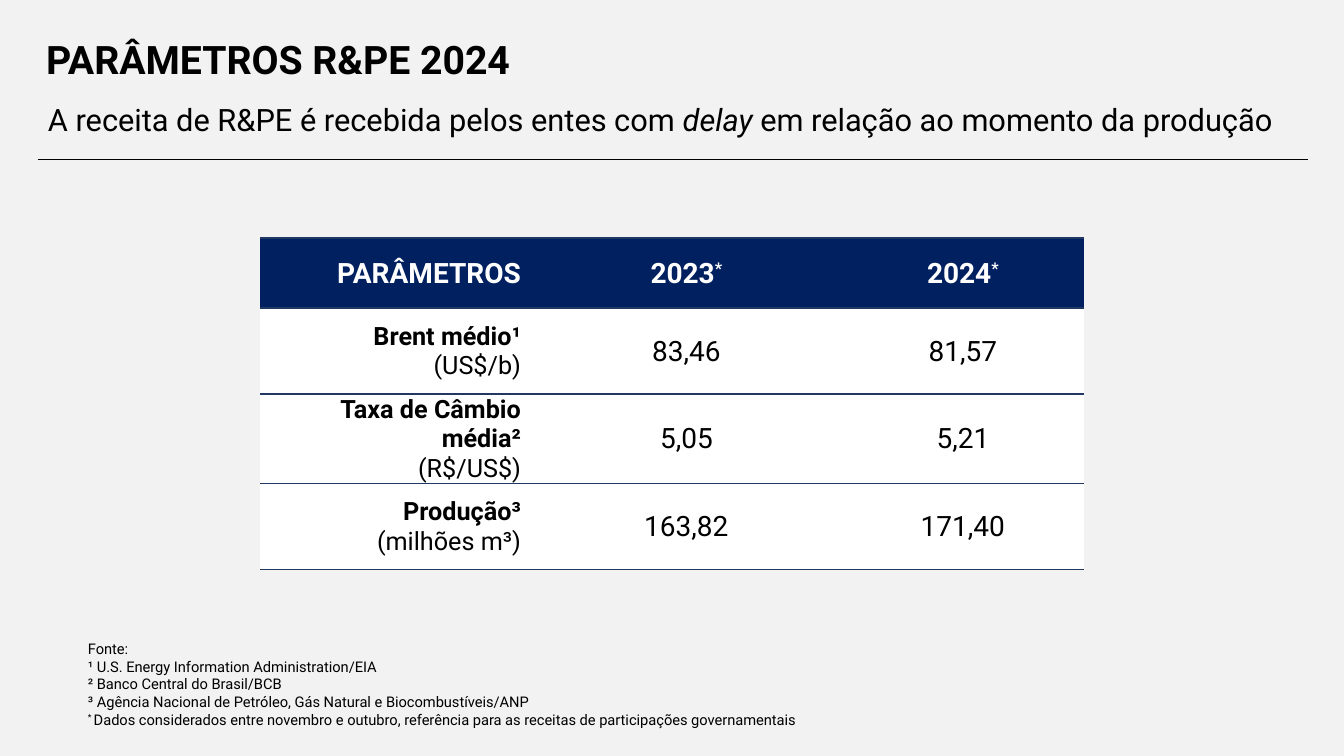
from lxml.etree import SubElement
from pptx import Presentation
from pptx.dml.color import RGBColor
from pptx.enum.shapes import MSO_CONNECTOR
from pptx.enum.text import MSO_ANCHOR, MSO_AUTO_SIZE, PP_ALIGN
from pptx.oxml.ns import qn
from pptx.util import Emu, Pt

BLACK = RGBColor(0x00, 0x00, 0x00)
WHITE = RGBColor(0xFF, 0xFF, 0xFF)
NAVY = RGBColor(0x00, 0x20, 0x60)
RULE_BLUE = RGBColor(0x20, 0x38, 0x64)
PAPER = RGBColor(0xF2, 0xF2, 0xF2)
PLAIN_TABLE_STYLE = "{2D5ABB26-0587-4C30-8999-92F81FD0307C}"


def px(length):
    return Emu(round(length * 914400 / 100.8))


class SlideBuilder:
    font = "Roboto"

    def __init__(self, deck):
        self.page = deck.slides.add_slide(deck.slide_layouts[5])
        fill = self.page.background.fill
        fill.solid()
        fill.fore_color.rgb = PAPER

    def add_paragraphs(self, frame, paragraphs, size, color=BLACK, align=PP_ALIGN.LEFT,
                       spacing=None):
        """Fill a frame; each paragraph is a list of (text, marks), marks using b, i and ^."""
        for index, spans in enumerate(paragraphs):
            para = frame.add_paragraph() if index else frame.paragraphs[0]
            para.alignment = align
            if spacing:
                para.line_spacing = spacing
            for text, marks in spans:
                span = para.add_run()
                span.text = text
                span.font.name = self.font
                span.font.size = Pt(size)
                span.font.color.rgb = color
                span.font.bold = "b" in marks
                span.font.italic = "i" in marks
                if "^" in marks:
                    span.font._element.set("baseline", "30000")

    def place_text(self, box, bounds, paragraphs, size, anchor=MSO_ANCHOR.MIDDLE, spacing=None):
        box.left, box.top, box.width, box.height = map(px, bounds)
        frame = box.text_frame
        frame.word_wrap = True
        frame.auto_size = MSO_AUTO_SIZE.NONE
        frame.vertical_anchor = anchor
        self.add_paragraphs(frame, paragraphs, size, spacing=spacing)

    def title(self, bounds, text):
        self.place_text(self.page.shapes.title, bounds, [[(text, "b")]], 28, spacing=0.9)

    def text(self, bounds, paragraphs, size, **style):
        box = self.page.shapes.add_textbox(0, 0, 0, 0)
        self.place_text(box, bounds, paragraphs, size, **style)

    def rule(self, left, right, y):
        line = self.page.shapes.add_connector(
            MSO_CONNECTOR.STRAIGHT, px(left), px(y), px(right), px(y))
        line.line.color.rgb = BLACK
        line.line.width = Pt(0.5)
        SubElement(line._element.spPr, qn("a:effectLst"))

    def table(self, left, top, widths, heights):
        frame = self.page.shapes.add_table(
            len(heights), len(widths), px(left), px(top), px(sum(widths)), px(sum(heights)))
        table = frame.table
        table._tbl.tblPr.find(qn("a:tableStyleId")).text = PLAIN_TABLE_STYLE
        table.horz_banding = False
        for column, width in zip(table.columns, widths):
            column.width = px(width)
        for row, height in zip(table.rows, heights):
            row.height = px(height)
        for index, row in enumerate(table.rows):
            for cell in row.cells:
                self.style_cell(cell, WHITE if index else NAVY)
        return table

    def style_cell(self, cell, color):
        cell.vertical_anchor = MSO_ANCHOR.MIDDLE
        cell.margin_left = cell.margin_top = cell.margin_right = px(1)
        cell.margin_bottom = 0
        for side in ("a:lnT", "a:lnB"):
            border = SubElement(cell._tc.get_or_add_tcPr(), qn(side), w=str(Pt(1)))
            solid = SubElement(border, qn("a:solidFill"))
            SubElement(solid, qn("a:srgbClr"), val=str(RULE_BLUE))
        cell.fill.solid()
        cell.fill.fore_color.rgb = color


def main():
    deck = Presentation()
    deck.slide_width, deck.slide_height = px(1344), px(756)
    slide = SlideBuilder(deck)

    slide.title((36, 22, 948, 80), "PARÂMETROS R&PE 2024")
    slide.rule(38, 1308, 159)

    parameters = [
        ("Brent médio¹", "(US$/b)", "83,46", "81,57"),
        ("Taxa de Câmbio média²", "(R$/US$)", "5,05", "5,21"),
        ("Produção³", "(milhões m³)", "163,82", "171,40"),
    ]
    table = slide.table(260, 238, [262, 60, 209, 51, 242], [70, 86, 86, 86])
    slide.add_paragraphs(table.cell(0, 0).text_frame, [[("PARÂMETROS", "b")]],
                         20, WHITE, PP_ALIGN.RIGHT)
    for column, year in ((2, "2023"), (4, "2024")):
        slide.add_paragraphs(table.cell(0, column).text_frame, [[(year, "b"), ("*", "b^")]],
                             20, WHITE, PP_ALIGN.CENTER)
    for row, (name, unit, *values) in enumerate(parameters, 1):
        slide.add_paragraphs(table.cell(row, 0).text_frame, [[(name, "b")], [(unit, "")]],
                             18, align=PP_ALIGN.RIGHT)
        for column, value in zip((2, 4), values):
            slide.add_paragraphs(table.cell(row, column).text_frame, [[(value, "")]],
                                 20, align=PP_ALIGN.CENTER)

    sources = [
        "Fonte:",
        "¹ U.S. Energy Information Administration/EIA",
        "² Banco Central do Brasil/BCB",
        "³ Agência Nacional de Petróleo, Gás Natural e Biocombustíveis/ANP",
    ]
    period_note = [("* ", "^"), ("Dados considerados entre novembro e outubro, referência para "
                                 "as receitas de participações governamentais", "")]
    slide.text((78, 635, 1169, 99), [[(source, "")] for source in sources] + [period_note],
               10.5, anchor=MSO_ANCHOR.TOP)
    slide.text((38, 86, 1270, 59), [[
        ("A receita de R&PE é recebida pelos entes com ", ""),
        ("delay ", "i"),
        ("em relação ao momento da produção", ""),
    ]], 22, spacing=1.2)
    deck.save("out.pptx")


if __name__ == "__main__":
    main()
